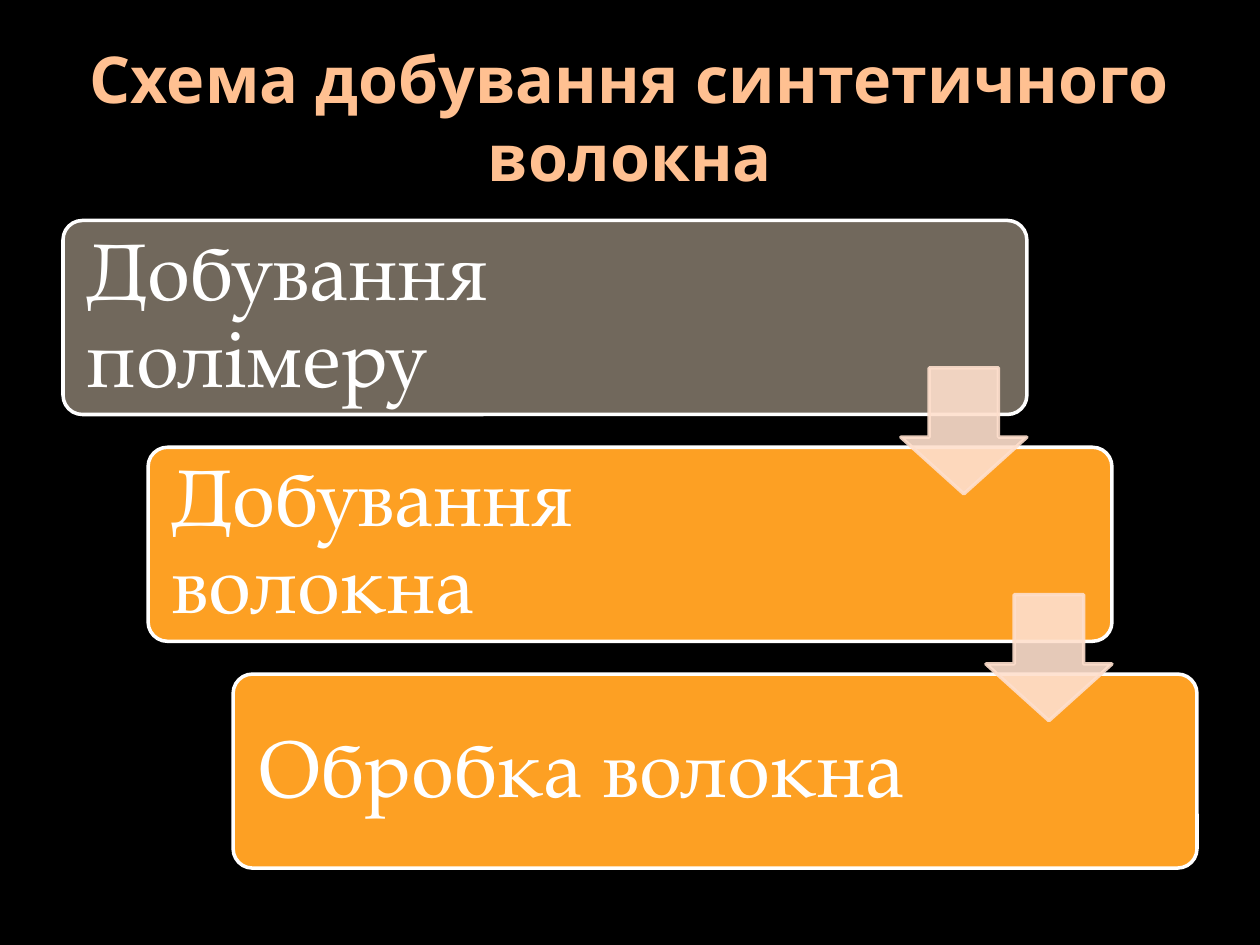
from lxml import etree
from pptx import Presentation
from pptx import util as u
from pptx.dml.color import RGBColor
from pptx.enum import shapes, text
from pptx.oxml.ns import qn

BLACK = RGBColor(0x00, 0x00, 0x00)
WHITE = RGBColor(0xFF, 0xFF, 0xFF)
PEACH = RGBColor(0xFF, 0xC0, 0x91)
TAUPE = RGBColor(0x71, 0x68, 0x5C)
ORANGE = RGBColor(0xFD, 0xA0, 0x23)
CREAM = RGBColor(0xFE, 0xDF, 0xCD)

prs = Presentation()
prs.slide_width, prs.slide_height = u.Inches(10), u.Inches(7.5)
s = prs.slides.add_slide(prs.slide_layouts[5])
s.background.fill.solid()
s.background.fill.fore_color.rgb = BLACK

# Staircase grid, in inches
LEFT, TOP = 0.5, 1.75
STEP_X, STEP_Y = 0.675, 1.8
BOX_W, BOX_H = 7.65, 1.54
ARROW = 1
ARROW_TOP = 2.92


def add_block(kind, x, y, w, h, fill, line):
    sp = group.shapes.add_shape(kind, u.Inches(x), u.Inches(y), u.Inches(w), u.Inches(h))
    sp.shadow.inherit = False
    sp.fill.solid()
    sp.fill.fore_color.rgb = fill
    sp.line.color.rgb = line
    sp.line.width = u.Pt(2)
    return sp


def add_run(p, words, font, size, color, bold=False):
    r = p.add_run()
    r.text = words
    r.font.name, r.font.size, r.font.bold = font, u.Pt(size), bold
    r.font.color.rgb = color


# Title
title = s.shapes.title
title.left, title.top = u.Inches(0.5), u.Inches(0.3)
title.width, title.height = u.Inches(9), u.Inches(1.25)
tf = title.text_frame
tf.vertical_anchor = text.MSO_ANCHOR.MIDDLE
p = tf.paragraphs[0]
p.alignment = text.PP_ALIGN.CENTER
add_run(p, "Схема добування синтетичного волокна", "Noto Sans", 36.9, PEACH, True)

# Steps, each one further right and down
group = s.shapes.add_group_shape()
steps = [
    ("Добування полімеру", TAUPE, 6.07),
    ("Добування волокна", ORANGE, 5.97),
    ("Обробка волокна", ORANGE, 5.97),
]
for i, (words, fill, text_w) in enumerate(steps):
    x, y = LEFT + i * STEP_X, TOP + i * STEP_Y
    box = add_block(shapes.MSO_SHAPE.ROUNDED_RECTANGLE, x, y, BOX_W, BOX_H, fill, WHITE)
    box.adjustments[0] = 0.1

    label = group.shapes.add_textbox(u.Inches(x), u.Inches(y), u.Inches(text_w), u.Inches(BOX_H))
    tf = label.text_frame
    tf.word_wrap = True
    tf.vertical_anchor = text.MSO_ANCHOR.MIDDLE
    tf.margin_left = tf.margin_right = tf.margin_top = tf.margin_bottom = u.Inches(0.19)
    p = tf.paragraphs[0]
    p.line_spacing = 0.9
    add_run(p, words, "TeX Gyre Pagella", 46, WHITE)

# Translucent arrows, flush with the right edge of the box above
for i in range(len(steps) - 1):
    x = LEFT + BOX_W - ARROW + i * STEP_X
    arrow = add_block(shapes.MSO_SHAPE.DOWN_ARROW, x, ARROW_TOP + i * STEP_Y,
                      ARROW, ARROW, CREAM, CREAM)
    arrow.adjustments[0], arrow.adjustments[1] = 0.55, 0.45
    for color in arrow.fill._xPr.iter(qn("a:srgbClr")):
        etree.SubElement(color, qn("a:alpha"), val="90000")

prs.save("out.pptx")
